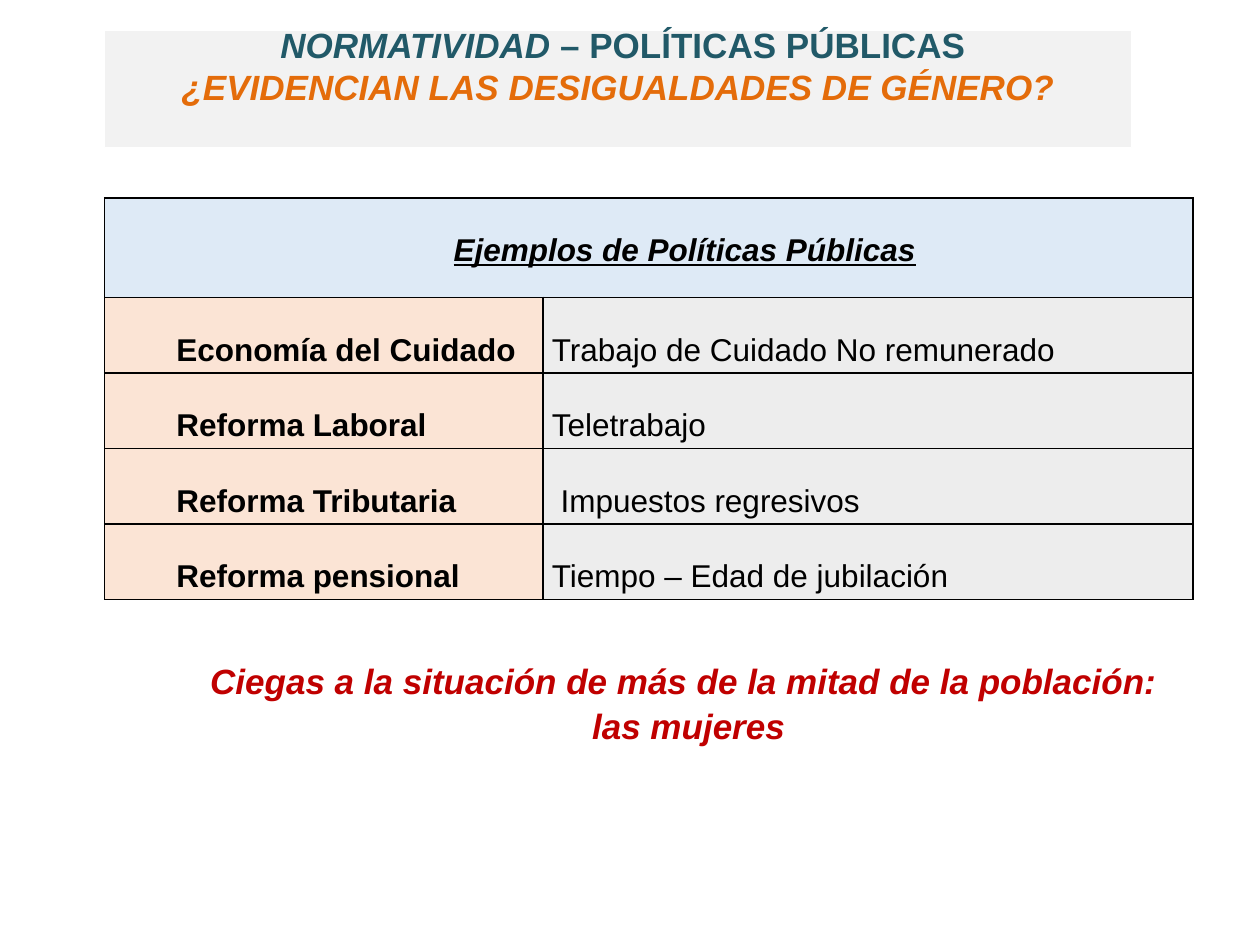
from lxml.etree import SubElement
from pptx import Presentation
from pptx.dml.color import RGBColor
from pptx.enum.text import MSO_ANCHOR, MSO_AUTO_SIZE, PP_ALIGN
from pptx.oxml.ns import qn
from pptx.util import Inches, Pt

COLORS = {
    "panel": "F2F2F2", "white": "FFFFFF", "black": "000000",
    "teal": "215968", "orange": "E46C0A", "red": "C00000",
    "header": "DEEAF6", "topic": "FBE4D5", "example": "EDEDED",
}
POLICIES = [
    ("Economía del Cuidado", "Trabajo de Cuidado No remunerado"),
    ("Reforma Laboral", "Teletrabajo"),
    ("Reforma Tributaria", " Impuestos regresivos"),
    ("Reforma pensional", "Tiempo – Edad de jubilación"),
]


class SlideBuilder:
    """Holds the style and the current slide; places are shares of the slide."""

    font_name = "Arial"

    def __init__(self, presentation):
        self.width = presentation.slide_width
        self.height = presentation.slide_height
        self.slide = presentation.slides.add_slide(presentation.slide_layouts[5])

    def box(self, left, top, width, height):
        return (round(left * self.width), round(top * self.height),
                round(width * self.width), round(height * self.height))

    def fill_text(self, frame, paragraphs, paragraph_format):
        """Fill a frame from lists of (text, colour, size, font values)."""
        for index, runs in enumerate(paragraphs):
            paragraph = frame.add_paragraph() if index else frame.paragraphs[0]
            for name, value in paragraph_format.items():
                setattr(paragraph, name, value)
            for text, color, size, values in runs:
                run = paragraph.add_run()
                run.text = text
                run.font.color.rgb = RGBColor.from_string(COLORS[color])
                values = {"name": self.font_name, "size": Pt(size), **values}
                for name, value in values.items():
                    setattr(run.font, name, value)

    def title(self, place, paragraphs):
        shape = self.slide.shapes.title
        shape.left, shape.top, shape.width, shape.height = self.box(*place)
        shape.fill.solid()
        shape.fill.fore_color.rgb = RGBColor.from_string(COLORS["panel"])
        shape.line.color.rgb = RGBColor.from_string(COLORS["white"])
        shape.line.width = Pt(0.75)
        frame_format = {
            "auto_size": MSO_AUTO_SIZE.NONE, "word_wrap": True,
            "vertical_anchor": MSO_ANCHOR.BOTTOM,
            "margin_left": 0, "margin_right": 0,
            "margin_top": Inches(0.05), "margin_bottom": Inches(0.32),
        }
        for name, value in frame_format.items():
            setattr(shape.text_frame, name, value)
        self.fill_text(shape.text_frame, paragraphs, {"alignment": PP_ALIGN.CENTER})

    def text(self, place, paragraphs, line_spacing):
        frame = self.slide.shapes.add_textbox(*self.box(*place)).text_frame
        frame.word_wrap = True
        self.fill_text(frame, paragraphs,
                       {"alignment": PP_ALIGN.CENTER, "line_spacing": line_spacing})

    def table(self, place, column_shares, row_shares):
        left, top, width, height = self.box(*place)
        table = self.slide.shapes.add_table(
            len(row_shares), len(column_shares), left, top, width, height).table
        table.first_row = table.horz_banding = False
        for column, share in zip(table.columns, column_shares):
            column.width = round(width * share)
        for row, share in zip(table.rows, row_shares):
            row.height = round(height * share)
        for cell in table.iter_cells():
            self.border(cell)
        return table

    def border(self, cell):
        properties = cell._tc.get_or_add_tcPr()
        for side in ("lnL", "lnR", "lnT", "lnB"):
            line = SubElement(properties, qn(f"a:{side}"), w=str(Pt(1)))
            fill = SubElement(line, qn("a:solidFill"))
            SubElement(fill, qn("a:srgbClr"), val=COLORS["black"])

    def cell(self, cell, fill, runs, indent=0, alignment=PP_ALIGN.LEFT):
        cell.fill.solid()
        cell.fill.fore_color.rgb = RGBColor.from_string(COLORS[fill])
        cell.margin_left = cell.margin_right = Inches(0.07)
        cell.margin_top = cell.margin_bottom = 0
        self.fill_text(cell.text_frame, [runs],
                       {"alignment": alignment, "line_spacing": 2.0})
        properties = cell.text_frame.paragraphs[0]._p.get_or_add_pPr()
        properties.set("marL", str(Inches(indent)))
        properties.set("indent", "0")


def main():
    presentation = Presentation()
    presentation.slide_width, presentation.slide_height = Inches(10), Inches(7.5)
    builder = SlideBuilder(presentation)
    bold = {"bold": True, "italic": False}
    emphasis = {"bold": True, "italic": True}

    builder.title((0.083, 0.24 / 7.5, 0.815, 0.93 / 7.5), [
        [(" ", "teal", 20, bold), ("NORMATIVIDAD", "teal", 20, emphasis),
         (" – POLÍTICAS PÚBLICAS", "teal", 20, bold)],
        [("¿EVIDENCIAN LAS DESIGUALDADES DE GÉNERO?", "orange", 20, emphasis)],
    ])

    table = builder.table((0.083, 1.57 / 7.5, 0.864, 3.19 / 7.5),
                          (3.48 / 8.64, 5.16 / 8.64),
                          [0.79 / 3.19] + [0.6 / 3.19] * len(POLICIES))
    table.cell(0, 0).merge(table.cell(0, 1))
    builder.cell(table.cell(0, 0), "header",
                 [(" ", "black", 18, emphasis),
                  ("Ejemplos de Políticas Públicas", "black", 18,
                   {**emphasis, "underline": True})],
                 indent=0.5, alignment=PP_ALIGN.CENTER)
    for row, (topic, example) in enumerate(POLICIES, start=1):
        builder.cell(table.cell(row, 0), "topic",
                     [(topic, "black", 18, bold)], indent=0.5)
        builder.cell(table.cell(row, 1), "example",
                     [(example, "black", 18, {"bold": False})])

    conclusion = ("Ciegas a la situación de más de la mitad de la población: ",
                  "las mujeres")
    builder.text((0.107, 5.16 / 7.5, 0.879, 0.82 / 7.5),
                 [[(line, "red", 20, emphasis)] for line in conclusion], 1.07)
    presentation.save("out.pptx")


if __name__ == "__main__":
    main()
